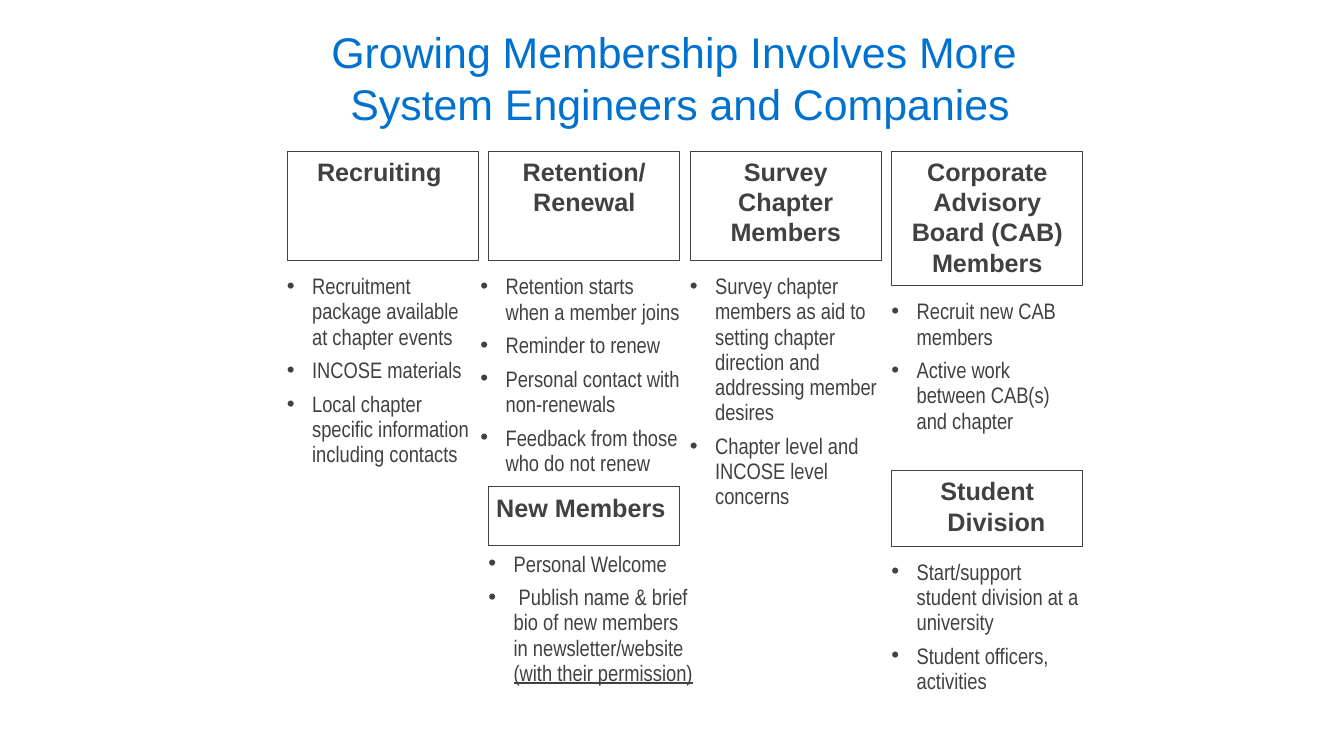
from lxml.etree import SubElement
from pptx import Presentation
from pptx.dml.color import RGBColor
from pptx.enum.shapes import MSO_SHAPE
from pptx.enum.text import MSO_ANCHOR, MSO_AUTO_SIZE, PP_ALIGN
from pptx.oxml.ns import qn
from pptx.util import Inches, Pt

COLORS = {"title": "0071CE", "text": "414042"}
TITLE_FONT = {"name": "Arial", "size": Pt(30.6), "bold": False}
HEADING_FONT = {"name": "Arial", "size": Pt(18), "bold": True}
LIST_FONT = {"name": "Arial Narrow", "size": Pt(16)}
LIST_SPACING = {"line_spacing": Pt(18), "space_after": Pt(6)}
TITLE_FRAME = {
    "word_wrap": True,
    "auto_size": MSO_AUTO_SIZE.NONE,
    "vertical_anchor": MSO_ANCHOR.BOTTOM,
    "margin_left": Inches(0.13),
    "margin_right": Inches(0.13),
    "margin_top": Inches(0.07),
    "margin_bottom": Inches(0.07),
}
HEADING_FRAME = {
    "word_wrap": True,
    "vertical_anchor": MSO_ANCHOR.TOP,
    "margin_left": Inches(0.05),
    "margin_right": Inches(0.05),
    "margin_top": Inches(0.05),
    "margin_bottom": Inches(0.05),
}
LIST_FRAME = {"word_wrap": True, "auto_size": MSO_AUTO_SIZE.SHAPE_TO_FIT_TEXT}

FIRST_COLUMN, COLUMN_PITCH, HEADING_WIDTH = 2.85, 2, 1.9

# column, heading top, heading height, hanging, heading, list (left, top, width, height), items
SECTIONS = [
    (0, 1.5, 1.08, False, "Recruiting ", (2.75, 2.67, 2.08, 2.04), [
        ["Recruitment package available at chapter events"],
        ["INCOSE materials"],
        ["Local chapter specific information including contacts"],
    ]),
    (2, 1.5, 1.08, False, "Survey Chapter Members", (6.75, 2.67, 2.08, 2.43), [
        ["Survey chapter members as aid to setting chapter direction "
         "and addressing member desires"],
        ["Chapter level and INCOSE level concerns"],
    ]),
    (1, 1.5, 1.08, False, "Retention/ Renewal", (4.67, 2.67, 2.18, 2.12), [
        ["Retention starts when a member joins"],
        ["Reminder to renew"],
        ["Personal contact with non-renewals"],
        ["Feedback from those who do not renew"],
    ]),
    (1, 4.83, 0.58, True, "New Members ", (4.75, 5.42, 2.25, 1.45), [
        ["Personal Welcome"],
        [" Publish name & brief bio of new members in newsletter/website ",
         "(with their permission)"],
    ]),
    (3, 1.5, 1.33, False, "Corporate Advisory Board (CAB) Members",
     (8.75, 2.92, 2.08, 1.43), [
        ["Recruit new CAB members"],
        ["Active work between CAB(s) and chapter"],
    ]),
    (3, 4.67, 0.75, True, "Student Division ", (8.75, 5.5, 2.08, 1.43), [
        ["Start/support student division at a university"],
        ["Student officers, activities"],
    ]),
]


def apply_format(target, values):
    for attribute, value in values.items():
        setattr(target, attribute, value)


def format_font(font, values, color):
    apply_format(font, values)
    font.color.rgb = RGBColor.from_string(COLORS[color])


def hang_indent(paragraph):
    properties = paragraph._p.get_or_add_pPr()
    properties.set("marL", str(Inches(0.25)))
    properties.set("indent", str(Inches(-0.25)))
    return properties


def add_bullet(paragraph):
    properties = hang_indent(paragraph)
    SubElement(properties, qn("a:buFont")).set("typeface", "Arial")
    SubElement(properties, qn("a:buChar")).set("char", "•")


def set_title(slide, wording):
    title = slide.shapes.title
    apply_format(title, {"left": Inches(3.04), "top": Inches(0.68),
                         "width": Inches(7.42), "height": Inches(0.67)})
    apply_format(title.text_frame, TITLE_FRAME)
    title.text_frame.text = wording
    paragraph = title.text_frame.paragraphs[0]
    paragraph.alignment = PP_ALIGN.CENTER
    for run in paragraph.runs:
        format_font(run.font, TITLE_FONT, "title")


def add_heading(slide, column, top, height, hanging, wording):
    left = FIRST_COLUMN + column * COLUMN_PITCH
    heading = slide.shapes.add_shape(
        MSO_SHAPE.RECTANGLE, Inches(left), Inches(top),
        Inches(HEADING_WIDTH), Inches(height))
    heading.shadow.inherit = False
    heading.fill.background()
    heading.line.color.rgb = RGBColor.from_string(COLORS["text"])
    heading.line.width = Pt(0.75)
    apply_format(heading.text_frame, HEADING_FRAME)
    paragraph = heading.text_frame.paragraphs[0]
    paragraph.alignment = PP_ALIGN.CENTER
    if hanging:
        hang_indent(paragraph)
    run = paragraph.add_run()
    run.text = wording
    format_font(run.font, HEADING_FONT, "text")


def add_list(slide, place, items):
    frame = slide.shapes.add_textbox(*map(Inches, place)).text_frame
    apply_format(frame, LIST_FRAME)
    for index, (wording, *underlined) in enumerate(items):
        paragraph = frame.add_paragraph() if index else frame.paragraphs[0]
        add_bullet(paragraph)
        apply_format(paragraph, LIST_SPACING)
        for part in (wording, *underlined):
            run = paragraph.add_run()
            run.text = part
            format_font(run.font, LIST_FONT, "text")
            if part in underlined:
                run.font.underline = True


def main():
    presentation = Presentation()
    presentation.slide_width = Inches(13.34)
    presentation.slide_height = Inches(7.5)
    slide = presentation.slides.add_slide(presentation.slide_layouts[5])
    set_title(slide, "Growing Membership Involves More \vSystem Engineers and Companies")
    for column, top, height, hanging, heading, place, items in SECTIONS:
        add_heading(slide, column, top, height, hanging, heading)
        add_list(slide, place, items)
    presentation.save("out.pptx")


if __name__ == "__main__":
    main()
